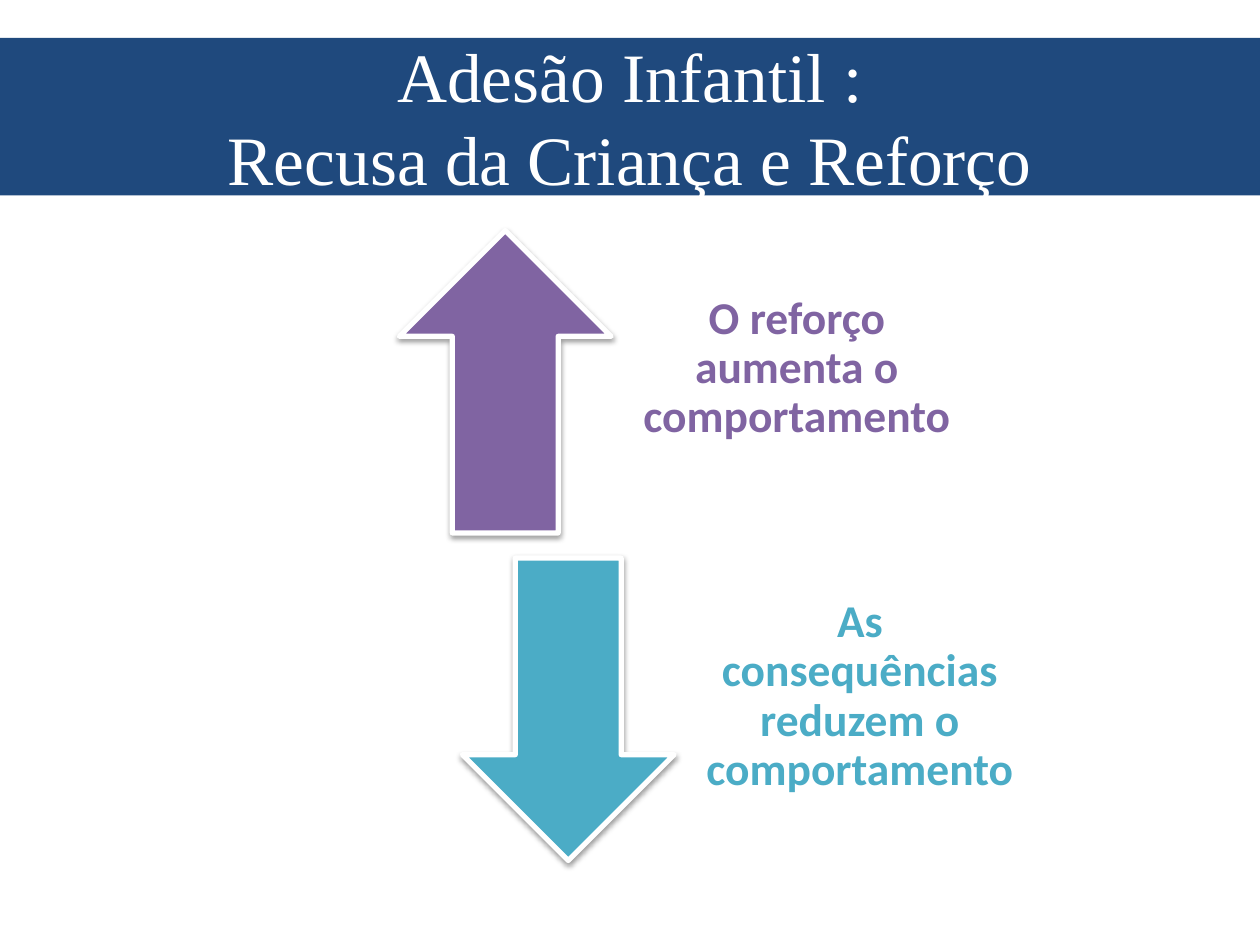
import pptx
import pptx.util
import pptx.dml.color
import pptx.enum.shapes
import pptx.enum.text
import pptx.oxml
import pptx.oxml.ns

Inches = pptx.util.Inches
Pt = pptx.util.Pt
Kind = pptx.enum.shapes.MSO_SHAPE


def paint(color, value):
    color.rgb = pptx.dml.color.RGBColor.from_string(value)


def write(frame, text, font="Calibri", size=26, color="000000", bold=False, space=1.0):
    frame.word_wrap = True
    frame.auto_size = pptx.enum.text.MSO_AUTO_SIZE.NONE
    frame.vertical_anchor = pptx.enum.text.MSO_ANCHOR.MIDDLE
    para = frame.paragraphs[0]
    para.text = text
    para.alignment = pptx.enum.text.PP_ALIGN.CENTER
    para.line_spacing = space
    for run in para.runs:
        run.font.name = font
        run.font.size = Pt(size)
        run.font.bold = bold
        paint(run.font.color, color)


def shade(shape, blur, dist, alpha):
    shape.shadow.inherit = False
    space = pptx.oxml.ns.nsdecls("a")
    glow = pptx.oxml.parse_xml(
        f'<a:outerShdw {space} blurRad="{Pt(blur)}" dist="{Pt(dist)}" '
        f'dir="5400000" rotWithShape="0"><a:srgbClr val="000000">'
        f'<a:alpha val="{alpha * 1000}"/></a:srgbClr></a:outerShdw>'
    )
    shape.element.spPr.find(pptx.oxml.ns.qn("a:effectLst")).append(glow)


class Deck:
    navy, white = "1F497D", "FFFFFF"
    violet, teal = "8064A2", "4BACC6"

    def __init__(self):
        self.file = pptx.Presentation()
        self.file.slide_width = Inches(10)
        self.file.slide_height = Inches(7.5)
        self.slide = self.file.slides.add_slide(self.file.slide_layouts[5])

    def title(self, text):
        shape = self.slide.shapes.title
        shape.left, shape.top = Inches(0), Inches(0.3)
        shape.width, shape.height = Inches(10), Inches(1.25)
        shape.fill.solid()
        paint(shape.fill.fore_color, self.navy)
        write(shape.text_frame, text, font="Times New Roman", size=39.6, color=self.white)

    def arrow(self, group, kind, left, top, color):
        shape = group.shapes.add_shape(
            kind, Inches(left), Inches(top), Inches(1.68), Inches(2.4)
        )
        shape.fill.solid()
        paint(shape.fill.fore_color, color)
        paint(shape.line.color, self.white)
        shape.line.width = Pt(3)
        shade(shape, blur=3.1, dist=1.6, alpha=38)

    def label(self, group, text, left, top, color):
        box = group.shapes.add_textbox(
            Inches(left), Inches(top), Inches(2.85), Inches(2.4)
        )
        frame = box.text_frame
        frame.margin_left = frame.margin_right = frame.margin_bottom = Inches(0.2)
        frame.margin_top = 0
        write(frame, text, color=color, bold=True, space=0.9)


def main():
    deck = Deck()
    deck.title("Adesão Infantil :\vRecusa da Criança e Reforço")
    group = deck.slide.shapes.add_group_shape()
    items = [
        (Kind.UP_ARROW, "O reforço aumenta o comportamento", deck.violet),
        (Kind.DOWN_ARROW, "As consequências reduzem o comportamento", deck.teal),
    ]
    for row, (kind, text, color) in enumerate(items):
        left, top = 3.17 + 0.5 * row, 1.83 + 2.6 * row
        deck.arrow(group, kind, left, top, color)
        deck.label(group, text, left + 1.73, top, color)
    deck.file.save("out.pptx")


if __name__ == "__main__":
    main()
